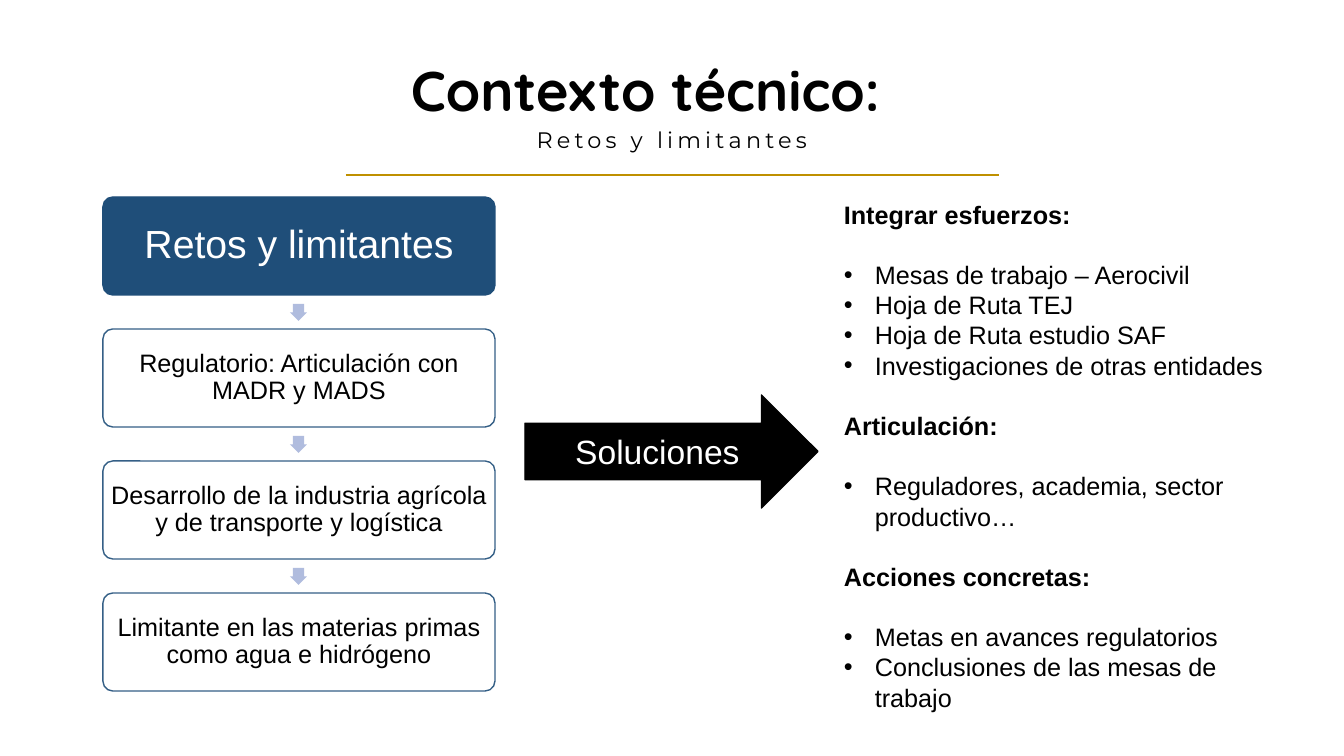
import lxml.etree
import pptx
import pptx.dml.color
import pptx.enum.shapes
import pptx.enum.text
import pptx.oxml.ns
import pptx.util

RGB = pptx.dml.color.RGBColor
SHAPE = pptx.enum.shapes.MSO_SHAPE
ALIGN = pptx.enum.text.PP_ALIGN
ANCHOR = pptx.enum.text.MSO_ANCHOR
AUTO_SIZE = pptx.enum.text.MSO_AUTO_SIZE
qn = pptx.oxml.ns.qn

BLACK = RGB(0x00, 0x00, 0x00)
WHITE = RGB(0xFF, 0xFF, 0xFF)
NAVY = RGB(0x1F, 0x4E, 0x79)
LAVENDER = RGB(0xB0, 0xBC, 0xDE)
GOLD = RGB(0xBF, 0x90, 0x00)

SLIDE_WIDTH, SLIDE_HEIGHT = 1344, 756
EMU_PER_PX = 12192000 / SLIDE_WIDTH
LIST_INDENT = 31
LIST_GAP = 21.5

CHALLENGES = [
    "Regulatorio: Articulación con MADR y MADS",
    "Desarrollo de la industria agrícola y de transporte y logística",
    "Limitante en las materias primas como agua e hidrógeno",
]
SOLUTIONS = {
    "Integrar esfuerzos:": [
        "Mesas de trabajo – Aerocivil",
        "Hoja de Ruta TEJ",
        "Hoja de Ruta estudio SAF",
        "Investigaciones de otras entidades",
    ],
    "Articulación:": ["Reguladores, academia, sector productivo…"],
    "Acciones concretas:": [
        "Metas en avances regulatorios",
        "Conclusiones de las mesas de trabajo",
    ],
}


def px(length):
    return round(length * EMU_PER_PX)


def write(frame, text, size=18, font="Arial", color=BLACK, bold=False, align=ALIGN.LEFT,
          line_spacing=None, before=0, after=0, tracking=None, bullet=False):
    """Fill the empty first paragraph of the frame, or add one after the last."""
    paragraph = frame.paragraphs[0] if not frame.text else frame.add_paragraph()
    properties = paragraph._p.get_or_add_pPr()
    if bullet:
        properties.set("marL", str(px(LIST_INDENT)))
        properties.set("indent", str(-px(LIST_INDENT)))
        lxml.etree.SubElement(properties, qn("a:buFont"), typeface="Arial")
        lxml.etree.SubElement(properties, qn("a:buChar"), char="•")
    paragraph.alignment = align
    if line_spacing:
        paragraph.line_spacing = line_spacing
    paragraph.space_before = pptx.util.Pt(before)
    paragraph.space_after = pptx.util.Pt(after)
    run = paragraph.add_run()
    run.text = text
    run.font.size = pptx.util.Pt(size)
    run.font.name = font
    run.font.bold = bold
    run.font.color.rgb = color
    if tracking:
        run._r.get_or_add_rPr().set("spc", str(tracking * 100))


class Deck:
    def __init__(self):
        self.presentation = pptx.Presentation()
        self.presentation.slide_width = px(SLIDE_WIDTH)
        self.presentation.slide_height = px(SLIDE_HEIGHT)
        self.slide = self.presentation.slides.add_slide(self.presentation.slide_layouts[6])

    def text_box(self, left, top, width, height, anchor=ANCHOR.TOP):
        box = self.slide.shapes.add_textbox(px(left), px(top), px(width), px(height))
        box.text_frame.word_wrap = True
        box.text_frame.vertical_anchor = anchor
        return box.text_frame

    def shape(self, kind, left, top, width, height, fill=None, line=None, adjustments=()):
        shape = self.slide.shapes.add_shape(kind, px(left), px(top), px(width), px(height))
        shape.shadow.inherit = False
        for index, value in enumerate(adjustments):
            shape.adjustments[index] = value
        if fill is None:
            shape.fill.background()
        else:
            shape.fill.solid()
            shape.fill.fore_color.rgb = fill
        if line is None:
            shape.line.fill.background()
        else:
            shape.line.color.rgb = line
            shape.line.width = pptx.util.Pt(1)
        shape.text_frame.word_wrap = True
        shape.text_frame.vertical_anchor = ANCHOR.MIDDLE
        return shape

    def card(self, left, top, width, height, text, inset, fill=None, **text_format):
        card = self.shape(SHAPE.ROUNDED_RECTANGLE, left, top, width, height,
                          fill, NAVY, [0.1])
        if fill is None:
            color = card.line._ln.find(".//" + qn("a:srgbClr"))
            lxml.etree.SubElement(color, qn("a:alpha"), val="90000")
        frame = card.text_frame
        frame.margin_left = frame.margin_right = px(inset)
        frame.margin_top = frame.margin_bottom = px(inset)
        write(frame, text, align=ALIGN.CENTER, line_spacing=0.9, **text_format)

    def rule(self, left, right, y):
        rule = self.slide.shapes.add_connector(
            pptx.enum.shapes.MSO_CONNECTOR.STRAIGHT, px(left), px(y), px(right), px(y))
        rule.line.color.rgb = GOLD
        rule.line.width = pptx.util.Pt(1.5)
        lxml.etree.SubElement(rule._element.spPr, qn("a:effectLst"))


def add_heading(deck):
    title = deck.text_box(311, 50, 669, 79, ANCHOR.BOTTOM)
    write(title, "Contexto técnico:", size=40, font="Quicksand", bold=True,
          align=ALIGN.CENTER, line_spacing=0.9)
    deck.rule(346, 999, 175)
    subtitle = deck.text_box(245, 124, 854, 38)
    write(subtitle, "Retos y limitantes", size=16, font="Montserrat",
          align=ALIGN.CENTER, line_spacing=0.9, tracking=3)


def add_challenges(deck):
    left, top, width, height, pitch, arrow = 103, 197, 392, 98, 132, 17
    deck.card(left, top, width, height, "Retos y limitantes", 4, NAVY, size=28, color=WHITE)
    for step, challenge in enumerate(CHALLENGES, start=1):
        card_top = top + step * pitch
        arrow_top = card_top - (pitch - height + arrow) // 2
        deck.shape(SHAPE.DOWN_ARROW, left + (width - arrow) // 2, arrow_top, arrow, arrow,
                   LAVENDER, adjustments=[0.67, 0.5])
        deck.card(left, card_top, width, height, challenge, 3)


def add_solutions(deck):
    arrow = deck.shape(SHAPE.RIGHT_ARROW, 525, 395, 293, 113, BLACK, BLACK)
    write(arrow.text_frame, "Soluciones", size=24, color=WHITE, align=ALIGN.CENTER)
    solutions = deck.text_box(834, 194, 452, 529)
    solutions.auto_size = AUTO_SIZE.SHAPE_TO_FIT_TEXT
    for index, (heading, actions) in enumerate(SOLUTIONS.items()):
        write(solutions, heading, bold=True, before=LIST_GAP if index else 0, after=LIST_GAP)
        for action in actions:
            write(solutions, action, bullet=True)


def main():
    deck = Deck()
    add_heading(deck)
    add_challenges(deck)
    add_solutions(deck)
    deck.presentation.save("out.pptx")


if __name__ == "__main__":
    main()
